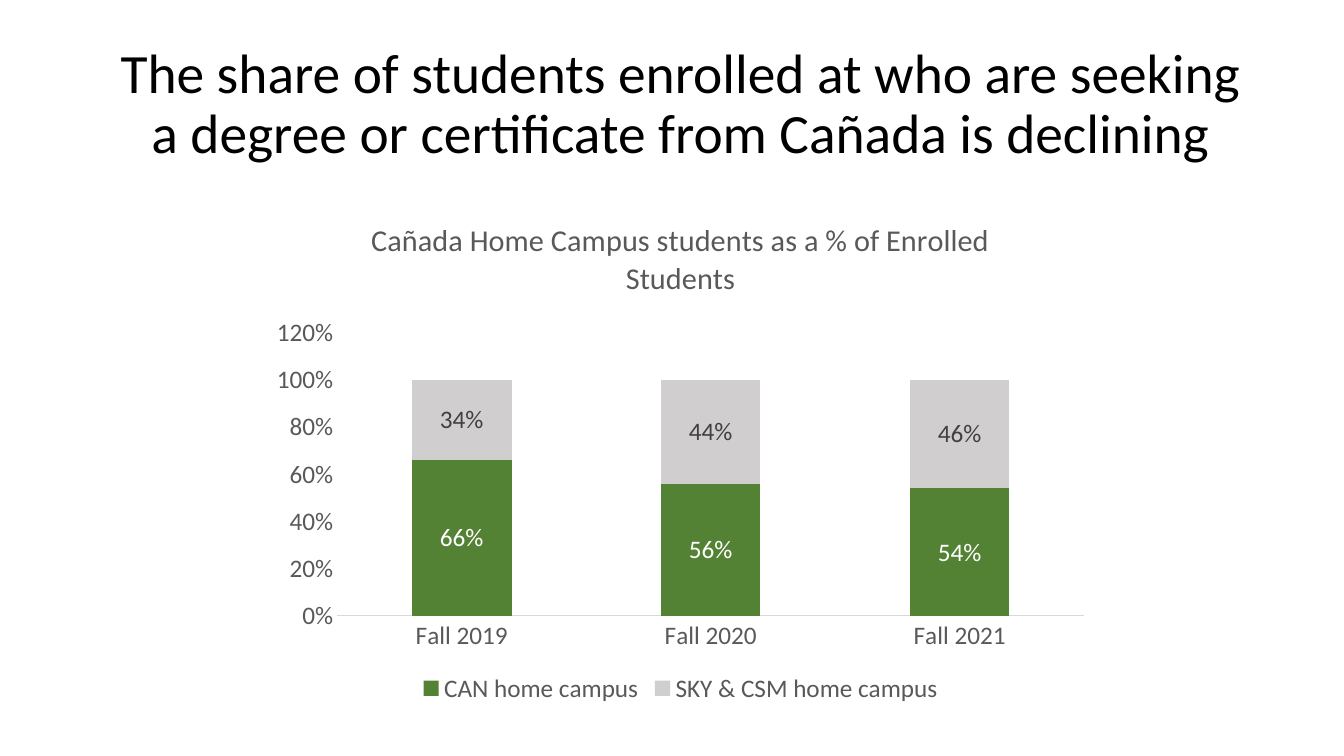
from pptx import Presentation
from pptx.chart.data import CategoryChartData
from pptx.dml.color import RGBColor
from pptx.enum.chart import XL_CHART_TYPE, XL_LABEL_POSITION, XL_LEGEND_POSITION, XL_TICK_MARK
from pptx.enum.text import MSO_ANCHOR, PP_ALIGN
from pptx.util import Inches, Pt

STACKED = XL_CHART_TYPE.COLUMN_STACKED
CENTER_LABEL = XL_LABEL_POSITION.CENTER
BOTTOM = XL_LEGEND_POSITION.BOTTOM
NO_TICK = XL_TICK_MARK.NONE
MIDDLE = MSO_ANCHOR.MIDDLE
CENTER = PP_ALIGN.CENTER

TITLE = "The share of students enrolled at who are seeking a degree or certificate from Cañada is declining"
CHART_TITLE = "Cañada Home Campus students as a % of Enrolled Students"
TERMS = ["Fall 2019", "Fall 2020", "Fall 2021"]
CAMPUSES = [
    ("CAN home campus", [0.66, 0.56, 0.54], "548235", "FFFFFF"),
    ("SKY & CSM home campus", [0.34, 0.44, 0.46], "D0CECE", "404040"),
]
TITLE_AREA = (1.09, 0.52, 11.32, 1.06)
CHART_AREA = (2.58, 1.96, 8.34, 5.07)
FONT, GREY, RULE, PERCENT = "Calibri", "595959", "D9D9D9", "0%"


def color(code):
    """Turn a hex string into a colour."""
    return RGBColor.from_string(code)


def style(font, size, code):
    """Set the face, size and colour of a font."""
    font.name, font.size, font.bold = FONT, Pt(size), False
    font.color.rgb = color(code)


def add_title(page):
    """Add the centred slide heading."""
    box = page.shapes.add_textbox(*map(Inches, TITLE_AREA))
    frame = box.text_frame
    frame.word_wrap, frame.vertical_anchor = True, MIDDLE
    frame.text = TITLE
    para = frame.paragraphs[0]
    para.alignment, para.line_spacing = CENTER, 0.9
    style(para.runs[0].font, 39.6, "000000")


def add_campus_chart(page):
    """Add the stacked columns of home campus shares."""
    data = CategoryChartData(number_format=PERCENT)
    data.categories = TERMS
    for name, shares, _, _ in CAMPUSES:
        data.add_series(name, shares)
    chart = page.shapes.add_chart(STACKED, *map(Inches, CHART_AREA), data).chart
    style(chart.font, 18, GREY)

    chart.has_title = True
    chart.chart_title.include_in_layout = False
    heading = chart.chart_title.text_frame
    heading.text = CHART_TITLE
    style(heading.paragraphs[0].runs[0].font, 21.6, GREY)

    chart.has_legend = True
    chart.legend.position, chart.legend.include_in_layout = BOTTOM, False
    style(chart.legend.font, 18, GREY)

    for axis in (chart.category_axis, chart.value_axis):
        axis.major_tick_mark = axis.minor_tick_mark = NO_TICK
        axis.has_major_gridlines = False
        style(axis.tick_labels.font, 18, GREY)
    line = chart.category_axis.format.line
    line.color.rgb, line.width = color(RULE), Pt(0.75)
    shares_axis = chart.value_axis
    shares_axis.format.line.fill.background()
    shares_axis.minimum_scale, shares_axis.maximum_scale = 0, 1.2
    shares_axis.major_unit = 0.2
    shares_axis.tick_labels.number_format = PERCENT
    shares_axis.tick_labels.number_format_is_linked = False

    plot = chart.plots[0]
    plot.gap_width, plot.overlap, plot.vary_by_categories = 150, 100, False
    for series, (_, _, fill, ink) in zip(plot.series, CAMPUSES):
        series.format.fill.solid()
        series.format.fill.fore_color.rgb = color(fill)
        labels = series.data_labels
        labels.show_value, labels.position = True, CENTER_LABEL
        labels.number_format, labels.number_format_is_linked = PERCENT, False
        style(labels.font, 18, ink)


def main():
    """Build and save the slide."""
    deck = Presentation()
    deck.slide_width, deck.slide_height = Inches(13.33), Inches(7.5)
    page = deck.slides.add_slide(deck.slide_layouts[6])
    add_title(page)
    add_campus_chart(page)
    deck.save("out.pptx")


if __name__ == "__main__":
    main()
